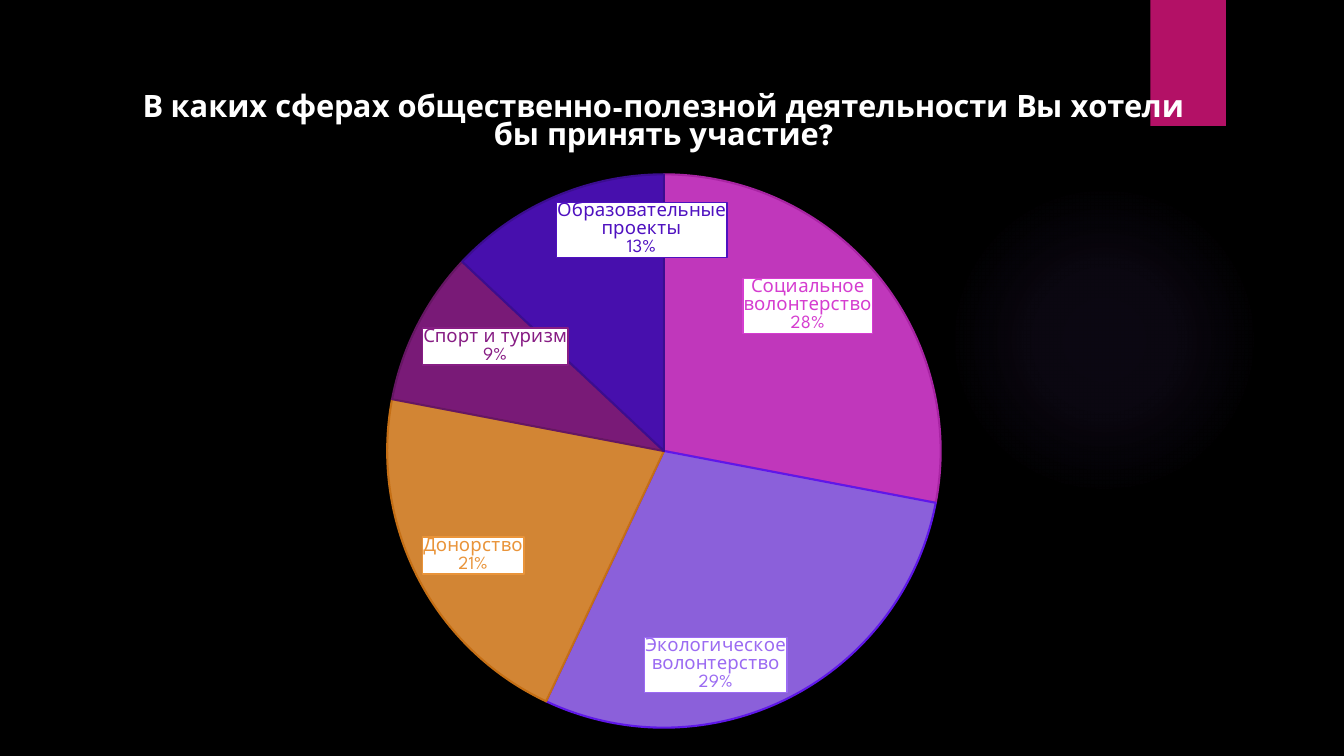
from typing import NamedTuple

import pptx
import pptx.chart.data
import pptx.dml.color
import pptx.enum.chart
import pptx.enum.shapes
import pptx.oxml
import pptx.oxml.ns
import pptx.util
from pptx.util import Inches, Pt

FONT = "League Spartan"
TITLE = ("В каких сферах общественно-полезной деятельности "
         "Вы хотели бы принять участие?")
NS = pptx.oxml.ns.nsdecls("a", "c")


class Slice(NamedTuple):
    name: str
    value: int
    fill: str
    edge: str


class Box(NamedTuple):
    left: float
    top: float
    width: float
    height: float


SLICES = [
    Slice("Социальное волонтерство", 28, "D53DD0", "A824A3"),
    Slice("Экологическое волонтерство", 29, "9B6BF2", "5F17E9"),
    Slice("Донорство", 21, "E9943A", "C56F15"),
    Slice("Спорт и туризм", 9, "871D84", "651663"),
    Slice("Образовательные проекты", 13, "4F11C0", "3B0D90"),
]
FRAME = Box(0, 0.68, 13.17, 6.67)
PIE = Box(3.84, 1.73, 5.49, 5.49)
HEAD = Box(1.36, 0.87, 0, 0)


def rgb(code: str) -> pptx.dml.color.RGBColor:
    return pptx.dml.color.RGBColor.from_string(code)


def place(box: Box) -> list:
    return [Inches(side) for side in box]


def add_alpha(fill, percent: int) -> None:
    """Make a solid fill partly transparent."""
    color = fill._xPr.find(".//" + pptx.oxml.ns.qn("a:srgbClr"))
    color.append(pptx.oxml.parse_xml(f'<a:alpha {NS} val="{percent * 1000}"/>'))


def layout(box: Box, inner: bool):
    """Chart layout from a box given in slide inches."""
    target = '<c:layoutTarget val="inner"/>' if inner else ""
    parts = {"x": (box.left - FRAME.left) / FRAME.width,
             "y": (box.top - FRAME.top) / FRAME.height}
    if inner:
        parts |= {"w": box.width / FRAME.width, "h": box.height / FRAME.height}
    modes = '<c:xMode val="edge"/><c:yMode val="edge"/>'
    sizes = "".join(f'<c:{key} val="{val:.4f}"/>' for key, val in parts.items())
    return pptx.oxml.parse_xml(f"<c:layout {NS}><c:manualLayout>{target}{modes}{sizes}"
                               "</c:manualLayout></c:layout>")


def add_glow(slide) -> None:
    glow = slide.shapes.add_shape(pptx.enum.shapes.MSO_SHAPE.OVAL,
                                  *place(Box(9.41, 1.83, 3.08, 3.08)))
    glow.shadow.inherit = False
    glow.line.fill.background()
    stops = "".join(
        f'<a:gs pos="{pos * 1000}"><a:srgbClr val="9B6BF2">'
        f'<a:alpha val="{alpha * 1000}"/></a:srgbClr></a:gs>'
        for pos, alpha in [(0, 7), (36, 6), (69, 0)])
    grad = pptx.oxml.parse_xml(
        f'<a:gradFill {NS}><a:gsLst>{stops}</a:gsLst><a:path path="circle">'
        '<a:fillToRect l="50000" t="50000" r="50000" b="50000"/></a:path></a:gradFill>')
    glow._element.spPr.find(pptx.oxml.ns.qn("a:prstGeom")).addnext(grad)


def add_tab(slide) -> None:
    tab = slide.shapes.add_shape(pptx.enum.shapes.MSO_SHAPE.RECTANGLE,
                                 *place(Box(11.41, 0, 0.75, 1.25)))
    tab.shadow.inherit = False
    tab.fill.solid()
    tab.fill.fore_color.rgb = rgb("B31166")
    tab.line.fill.background()


def style_label(point, item: Slice, node) -> None:
    """White box with the category and percentage in the slice colour."""
    label = point.data_label
    label.font.size = Pt(13.3)
    label.font.name = FONT
    label.font.color.rgb = rgb(item.fill)
    label.position = pptx.enum.chart.XL_LABEL_POSITION.INSIDE_END
    mark = node.findall(pptx.oxml.ns.qn("c:dLbl"))[-1]
    for key, val in {"Val": "0", "CatName": "1", "Percent": "1"}.items():
        mark.find(pptx.oxml.ns.qn(f"c:show{key}")).set("val", val)
    mark.append(pptx.oxml.parse_xml(f"<c:separator {NS}>\n</c:separator>"))
    mark.find(pptx.oxml.ns.qn("c:txPr")).addprevious(pptx.oxml.parse_xml(
        f'<c:spPr {NS}><a:solidFill><a:srgbClr val="FFFFFF"/></a:solidFill>'
        f'<a:ln w="12700"><a:solidFill><a:srgbClr val="{item.fill}"/></a:solidFill>'
        "</a:ln></c:spPr>"))


def add_pie(slide) -> None:
    data = pptx.chart.data.CategoryChartData()
    data.categories = [item.name for item in SLICES]
    data.add_series("Series 1", [item.value for item in SLICES])
    chart = slide.shapes.add_chart(pptx.enum.chart.XL_CHART_TYPE.PIE,
                                   *place(FRAME), data).chart
    chart.has_legend = False
    chart.font.size = Pt(10)
    chart.font.name = FONT
    chart.font.color.rgb = rgb("FFFFFF")

    # Chart title
    chart.has_title = True
    title = chart.chart_title
    title.include_in_layout = False
    line = title.text_frame.paragraphs[0]
    line.text = TITLE
    line.font.size = Pt(22)
    line.font.bold = True
    line.font.name = FONT
    line.font.color.rgb = rgb("FFFFFF")
    for old in title._element.findall(pptx.oxml.ns.qn("c:layout")):
        title._element.remove(old)
    title._element.find(pptx.oxml.ns.qn("c:tx")).addnext(layout(HEAD, False))

    # Plot area
    area = chart._chartSpace.chart.plotArea
    for old in area.findall(pptx.oxml.ns.qn("c:layout")):
        area.remove(old)
    area.insert(0, layout(PIE, True))

    # Slices and labels
    plot = chart.plots[0]
    plot.vary_by_categories = True
    series = plot.series[0]
    labels = series.data_labels
    labels.show_value = False
    labels.show_category_name = True
    labels.show_percentage = True
    labels.position = pptx.enum.chart.XL_LABEL_POSITION.INSIDE_END
    for index, item in enumerate(SLICES):
        point = series.points[index]
        shape = point.format
        shape.fill.solid()
        shape.fill.fore_color.rgb = rgb(item.fill)
        add_alpha(shape.fill, 90)
        shape.line.color.rgb = rgb(item.edge)
        shape.line.width = Pt(1.5)
        style_label(point, item, labels._element)


def main() -> None:
    deck = pptx.Presentation()
    deck.slide_width = Inches(13.33)
    deck.slide_height = Inches(7.5)
    slide = deck.slides.add_slide(deck.slide_layouts[6])
    slide.background.fill.solid()
    slide.background.fill.fore_color.rgb = rgb("000000")
    add_glow(slide)
    add_tab(slide)
    add_pie(slide)
    deck.save("out.pptx")


if __name__ == "__main__":
    main()
